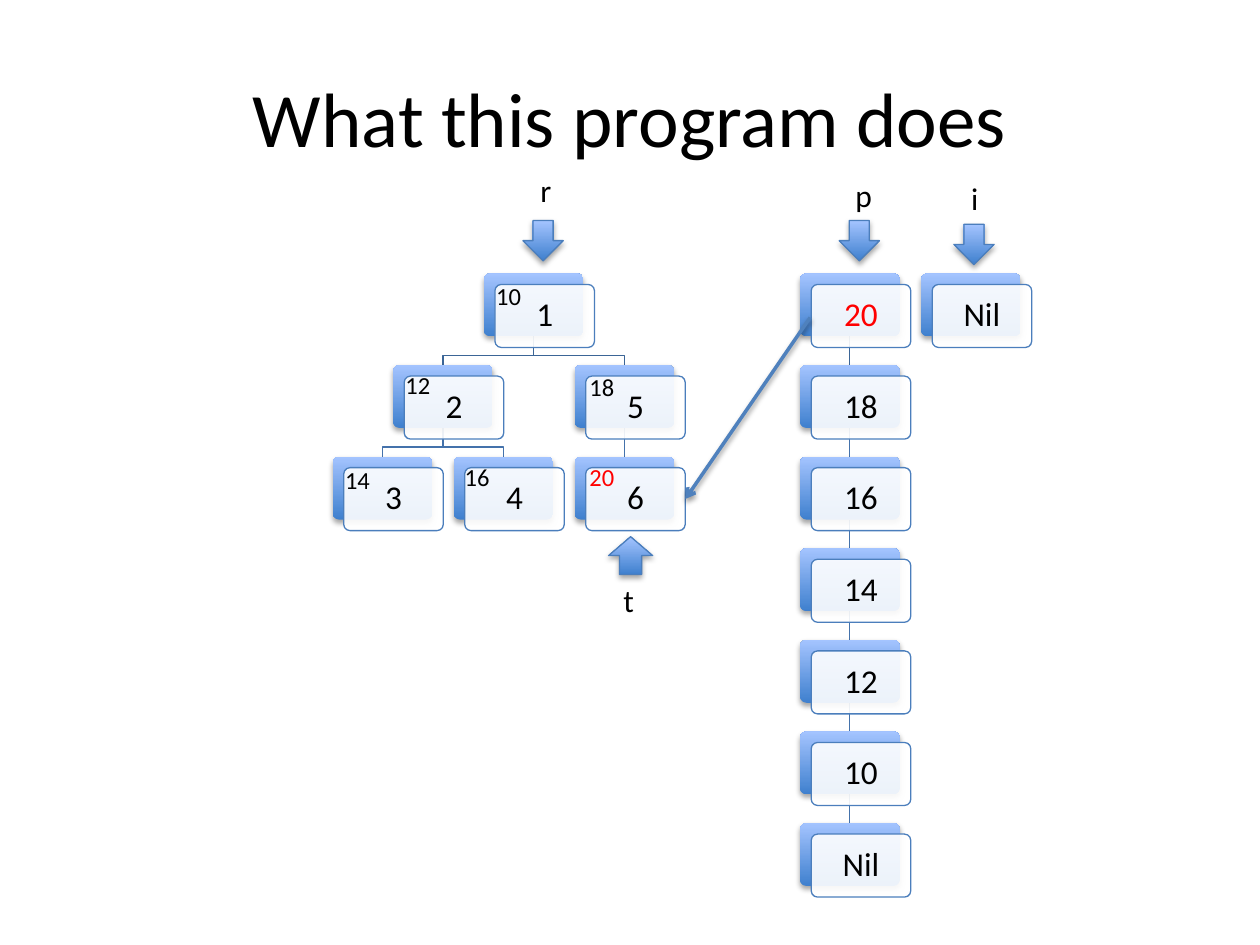
from lxml import etree
from pptx import Presentation
from pptx.dml.color import RGBColor
from pptx.enum.shapes import MSO_CONNECTOR, MSO_SHAPE
from pptx.enum.text import MSO_ANCHOR, PP_ALIGN
from pptx.oxml.ns import qn
from pptx.util import Inches, Pt

BLACK, RED, WHITE = "000000", "FF0000", "FFFFFF"
EDGE, ROOT_LINK, LINK, POINTER = "4B7EBC", "3B6596", "4472AB", "4F81BD"
DARK, LIGHT = "3F80CE", "A4C4FF"

NODE_W, NODE_H, CARD_SHIFT = 0.79, 0.5, 0.088
TREE_X, COL_STEP = 2.64, 0.48
LIST_X, NIL_X = 6.35, 7.31
TOP, ROW_STEP = 2.17, 0.727

# node: column, row, parent, stored value, left and top of the value, colour
TREE = {
    "1": (2.5, 0, None, "10", 3.84, 2.18, BLACK),
    "2": (1, 1, "1", "12", 3.12, 2.89, BLACK),
    "3": (0, 2, "2", "14", 2.64, 3.64, BLACK),
    "4": (2, 2, "2", "16", 3.59, 3.62, BLACK),
    "5": (4, 1, "1", "18", 4.58, 2.9, BLACK),
    "6": (4, 2, "5", "20", 4.58, 3.62, RED),
}
LIST = ["20", "18", "16", "14", "12", "10", "Nil"]

# variable: left and top of its name, arrow shape, arrow box
VARIABLES = {
    "t": (4.85, 4.56, MSO_SHAPE.UP_ARROW, (4.83, 4.26, 0.35, 0.3)),
    "p": (6.69, 1.35, MSO_SHAPE.DOWN_ARROW, (6.66, 1.75, 0.32, 0.32)),
    "i": (7.61, 1.37, MSO_SHAPE.DOWN_ARROW, (7.57, 1.78, 0.32, 0.32)),
    "r": (4.19, 1.31, MSO_SHAPE.DOWN_ARROW, (4.15, 1.75, 0.32, 0.32)),
}


def rgb(color):
    return RGBColor.from_string(color)


def inches(*values):
    return [Inches(v) for v in values]


def set_effects(s, alpha=None, dist=1.8):
    """Give a shape its own effect list: empty, or with a soft shadow below."""
    effects = etree.SubElement(s._element.spPr, qn("a:effectLst"))
    if alpha is None:
        return
    shadow = etree.SubElement(
        effects, qn("a:outerShdw"), blurRad=str(Pt(3.1)), dist=str(Pt(dist)),
        dir="5400000", rotWithShape="0")
    color = etree.SubElement(shadow, qn("a:srgbClr"), val=BLACK)
    etree.SubElement(color, qn("a:alpha"), val=str(alpha * 1000))


def set_line(s, color, width=0.75):
    s.line.color.rgb = rgb(color)
    s.line.width = Pt(width)


def write(s, text, size, color=BLACK, align=PP_ALIGN.CENTER):
    p = s.text_frame.paragraphs[0]
    p.text = text
    p.alignment = align
    p.font.name = "Calibri"
    p.font.size = Pt(size)
    p.font.color.rgb = rgb(color)
    return p


def add_title(slide, text):
    s = slide.shapes.add_textbox(*inches(0.5, 0.3, 9, 1.25))
    s.text_frame.word_wrap = True
    s.text_frame.vertical_anchor = MSO_ANCHOR.MIDDLE
    write(s, text, 44)


def add_label(slide, text, x, y, size, color=BLACK):
    s = slide.shapes.add_textbox(*inches(x, y, 0.3 if size > 14 else 0.4, 0.4 if size > 14 else 0.34))
    s.text_frame.word_wrap = False
    write(s, text, size, color, PP_ALIGN.LEFT)


def add_glossy(slide, kind, box, edge=None):
    s = slide.shapes.add_shape(kind, *inches(*box))
    s.fill.gradient()
    s.fill.gradient_angle = 90
    for stop, color in zip(s.fill.gradient_stops, (DARK, LIGHT)):
        stop.color.rgb = rgb(color)
    if edge:
        set_line(s, edge)
    else:
        s.line.fill.background()
    set_effects(s, alpha=35)
    return s


def add_node(slide, text, x, y, color=BLACK):
    """A white card in front of a blue plate."""
    plate = add_glossy(slide, MSO_SHAPE.ROUNDED_RECTANGLE, (x, y, NODE_W, NODE_H))
    card = slide.shapes.add_shape(
        MSO_SHAPE.ROUNDED_RECTANGLE,
        *inches(x + CARD_SHIFT, y + CARD_SHIFT, NODE_W, NODE_H))
    plate.adjustments[0] = card.adjustments[0] = 0.1
    card.fill.solid()
    card.fill.fore_color.rgb = rgb(WHITE)
    fill_color = card._element.spPr.find(qn("a:solidFill"))[0]
    etree.SubElement(fill_color, qn("a:alpha"), val="90000")
    set_line(card, EDGE)
    set_effects(card)
    tf = card.text_frame
    tf.word_wrap = True
    tf.vertical_anchor = MSO_ANCHOR.MIDDLE
    tf.margin_left = tf.margin_right = tf.margin_top = tf.margin_bottom = Inches(0.09)
    write(card, text, 19, color).line_spacing = 0.9


def add_straight(slide, start, end, color, width=0.75):
    s = slide.shapes.add_connector(MSO_CONNECTOR.STRAIGHT, *inches(*start, *end))
    set_line(s, color, width)
    return s


def add_link(slide, parent, child, color):
    """Join the foot of the parent's plate to the top of the child's."""
    x1, y1 = parent[0] + NODE_W / 2, parent[1] + NODE_H
    x2, y2 = child[0] + NODE_W / 2, child[1]
    if x1 == x2:
        s = add_straight(slide, (x1, y1), (x2, y2), color)
    else:
        bend = y1 + 0.15
        builder = slide.shapes.build_freeform(*inches(x1, y1))
        builder.add_line_segments(
            [inches(x1, bend), inches(x2, bend), inches(x2, y2)], close=False)
        s = builder.convert_to_shape()
        s.fill.background()
        set_line(s, color)
    set_effects(s)


def add_pointer(slide, start, end):
    s = add_straight(slide, start, end, POINTER, 2)
    etree.SubElement(s.line._get_or_add_ln(), qn("a:tailEnd"), type="arrow")
    set_effects(s, alpha=38, dist=1.6)


def main():
    prs = Presentation()
    prs.slide_width, prs.slide_height = inches(10, 7.5)
    slide = prs.slides.add_slide(prs.slide_layouts[6])
    add_title(slide, "What this program does")

    tree_at = {name: (TREE_X + node[0] * COL_STEP, TOP + node[1] * ROW_STEP)
               for name, node in TREE.items()}
    list_at = [(LIST_X, TOP + i * ROW_STEP) for i in range(len(LIST))]

    for i, (upper, lower) in enumerate(zip(list_at, list_at[1:])):
        add_link(slide, upper, lower, LINK if i else ROOT_LINK)
    for name, (_, row, parent, *_) in TREE.items():
        if parent:
            add_link(slide, tree_at[parent], tree_at[name], ROOT_LINK if row == 1 else LINK)

    for name, at in tree_at.items():
        add_node(slide, name, *at)
    for i, (text, at) in enumerate(zip(LIST, list_at)):
        add_node(slide, text, *at, BLACK if i else RED)
    add_node(slide, "Nil", NIL_X, TOP)

    for name, (x, y, kind, box) in VARIABLES.items():
        add_label(slide, name, x, y, 18)
        add_glossy(slide, kind, box, EDGE)
    for _, _, _, value, x, y, color in TREE.values():
        add_label(slide, value, x, y, 14, color)
    add_pointer(slide, (6.43, 2.52), (5.44, 3.96))

    prs.save("out.pptx")


if __name__ == "__main__":
    main()
